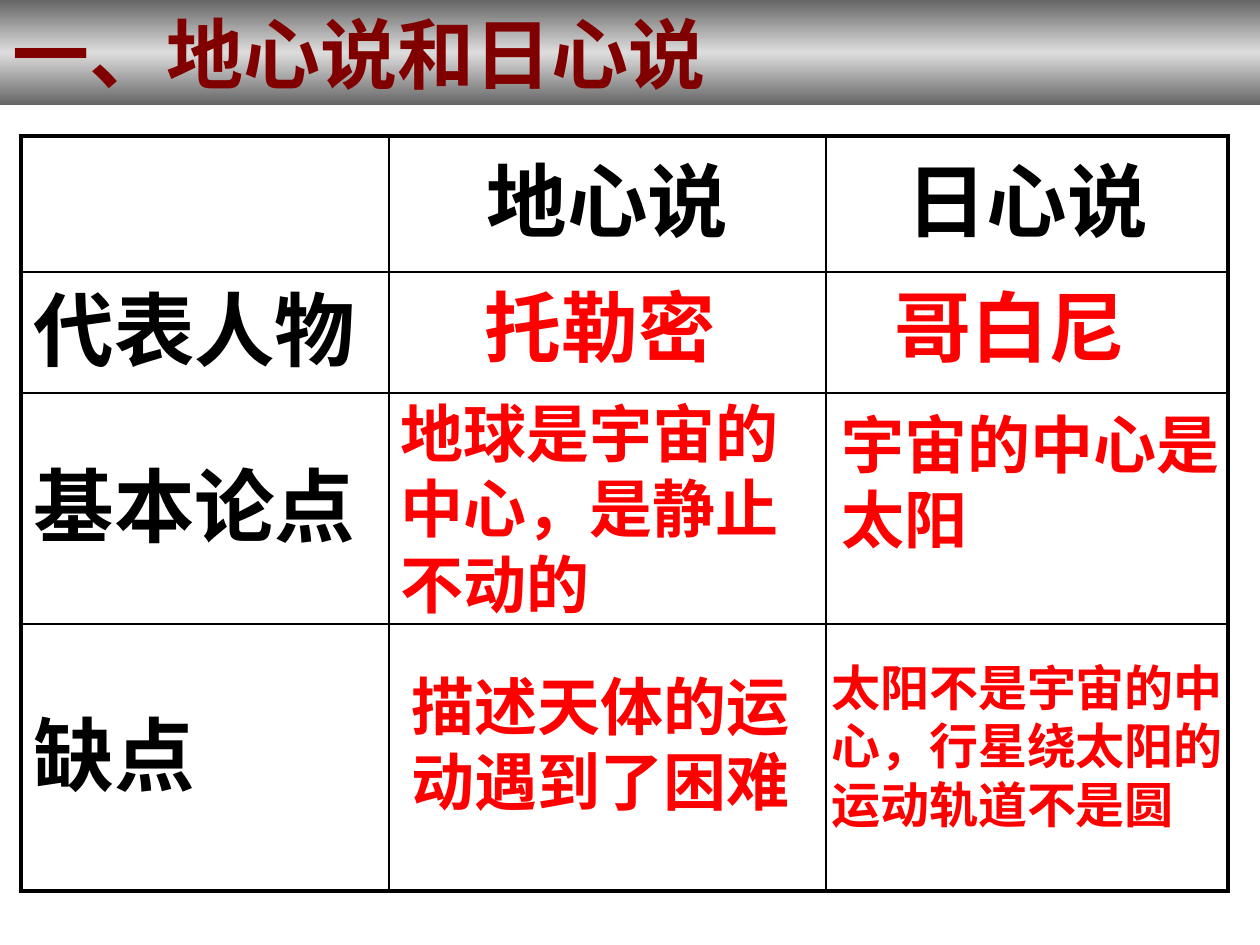
"""Build a slide comparing the geocentric and heliocentric theories in a table."""
from copy import deepcopy

from lxml.etree import SubElement
from pptx import Presentation
from pptx.dml.color import RGBColor
from pptx.enum.shapes import MSO_SHAPE
from pptx.enum.text import MSO_ANCHOR, PP_ALIGN
from pptx.oxml import parse_xml
from pptx.oxml.ns import nsdecls, qn
from pptx.util import Emu, Pt

FONT = "DejaVu Sans"
BLACK = RGBColor(0, 0, 0)
RED = RGBColor(255, 0, 0)
MAROON = RGBColor(128, 0, 0)
DARK = RGBColor(0x66, 0x66, 0x66)
LIGHT = RGBColor(0xDD, 0xDD, 0xDD)


def px(*values):
    return [Emu(round(v * 914400 / 126)) for v in values]


def write(tf, text, size, color, align=PP_ALIGN.LEFT):
    p = tf.paragraphs[0]
    p.alignment = align
    r = p.add_run()
    r.text = text
    for name, value in {"name": FONT, "size": Pt(size), "bold": True}.items():
        setattr(r.font, name, value)
    r.font.color.rgb = color
    SubElement(r.font._element, qn("a:ea"), typeface=FONT)
    return p


prs = Presentation()
prs.slide_width, prs.slide_height = px(1260, 945)
s = prs.slides.add_slide(prs.slide_layouts[6])

bar = s.shapes.add_shape(MSO_SHAPE.RECTANGLE, *px(0, 0, 1260, 105))
bar.shadow.inherit = False
bar.line.fill.background()
bar.fill.gradient()
bar.fill.gradient_angle = 270
stops = next(bar._element.iter(qn("a:gsLst")))
stops.append(deepcopy(stops[0]))
for stop, position, color in zip(bar.fill.gradient_stops, (0, 0.5, 1), (DARK, LIGHT, DARK)):
    stop.position = position
    stop.color.rgb = color
bar.text_frame.word_wrap = True
bar.text_frame.vertical_anchor = MSO_ANCHOR.TOP
write(bar.text_frame, "一、地心说和日心说", 44, MAROON)

columns = (368, 437, 402)
rows = (136, 121, 231, 267)
labels = (
    ("", "地心说", "日心说"),
    ("代表人物", "", ""),
    ("基本论点", "", ""),
    ("缺点", "", ""),
)
frame = s.shapes.add_table(len(rows), len(columns), *px(21, 136, sum(columns), sum(rows)))
table = frame.table
table.first_row = table.horz_banding = False
for column, width in zip(table.columns, px(*columns)):
    column.width = width
for row, height in zip(table.rows, px(*rows)):
    row.height = height

for i, texts in enumerate(labels):
    for j, text in enumerate(texts):
        cell = table.cell(i, j)
        cell.fill.background()
        cell.vertical_anchor = MSO_ANCHOR.MIDDLE
        if text:
            align = PP_ALIGN.LEFT if j == 0 else PP_ALIGN.CENTER
            p = write(cell.text_frame, text, 46, BLACK, align)
            p.space_before = Pt(9)
        outer = {
            "lnL": j == 0,
            "lnR": j == len(columns) - 1,
            "lnT": i == 0,
            "lnB": i == len(rows) - 1,
        }
        for n, (side, edge) in enumerate(outer.items()):
            width = Pt(2.25 if edge else 1)
            cell._tc.get_or_add_tcPr().insert(n, parse_xml(
                f'<a:{side} {nsdecls("a")} w="{width}"><a:solidFill>'
                f'<a:srgbClr val="{BLACK}"/></a:solidFill></a:{side}>'))

answers = (
    ("托勒密", 44, (472, 273, 273, 105)),
    ("哥白尼", 44, (882, 273, 273, 105)),
    ("地球是宇宙的中心，是静止不动的", 36, (388, 388, 431, 239)),
    ("宇宙的中心是太阳", 36, (829, 399, 431, 164)),
    ("描述天体的运动遇到了困难", 36, (399, 661, 431, 164)),
    ("太阳不是宇宙的中心，行星绕太阳的运动轨道不是圆", 28, (819, 651, 431, 189)),
)
for text, size, box in answers:
    sp = s.shapes.add_textbox(*px(*box))
    sp.text_frame.word_wrap = True
    write(sp.text_frame, text, size, RED)

prs.save("out.pptx")
